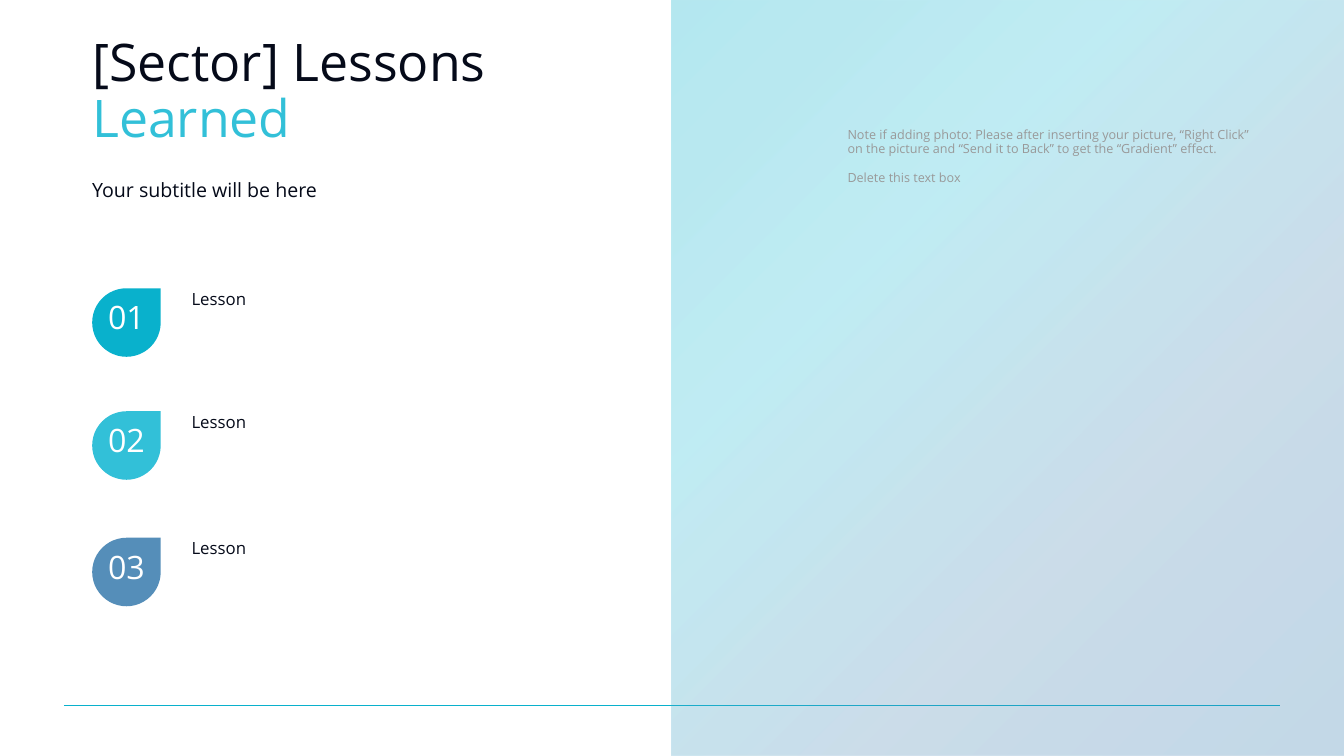
"""Build a lessons-learned slide with three numbered lessons beside a gradient panel."""
import pptx
import pptx.util
import pptx.dml.color
import pptx.enum.shapes
import pptx.enum.text
import pptx.oxml.ns
from lxml import etree

TITLE = [("[Sector] Lessons ", "ink"), ("Learned", "sky")]
SUBTITLE = "Your subtitle will be here"
LESSONS = [
    ("01", "Lesson", "teal", 38.13),
    ("02", "Lesson", "sky", 54.4),
    ("03", "Lesson", "steel", 71.13),
]
NOTE = [
    "Note if adding photo: Please after inserting your picture, “Right Click” on the picture "
    "and “Send it to Back” to get the “Gradient” effect.",
    "Delete this text box",
]

THEME = {
    "font": "Open Sans",
    "colors": {"ink": "050A19", "teal": "09B1CC", "sky": "32C0D8", "steel": "558EB9",
               "blue": "397FB0", "white": "FFFFFF", "grey": "999999"},
    "sizes": {"title": 74, "number": 46, "subtitle": 28, "lesson": 24, "note": 18},
    "panel": [(0, "teal"), (33, "sky"), (66, "steel"), (100, "blue")],
    "panel_alpha": 30,
}

W, H = 26.67, 15
LEFT, TEXT_LEFT, DROP = 6.86, 14.25, 1.36
SHAPES = pptx.enum.shapes.MSO_SHAPE
ALIGN = pptx.enum.text.PP_ALIGN


def rgb(name):
    return pptx.dml.color.RGBColor.from_string(THEME["colors"][name])


def place(x, y, w, h):
    """Turn percentages of the slide into lengths."""
    return [pptx.util.Inches(v * side / 100) for v, side in ((x, W), (y, H), (w, W), (h, H))]


def assign(obj, values):
    for name, value in values.items():
        setattr(obj, name, value)


def add_text(s, box, paragraphs, size, spacing=0.9, margins=(0, 0), align=ALIGN.LEFT, gap=0):
    tf = s.shapes.add_textbox(*place(*box)).text_frame
    mx, my = (pptx.util.Inches(m) for m in margins)
    assign(tf, {"word_wrap": True, "margin_left": mx, "margin_right": mx,
                "margin_top": my, "margin_bottom": my})
    for i, runs in enumerate(paragraphs):
        p = tf.add_paragraph() if i else tf.paragraphs[0]
        assign(p, {"line_spacing": spacing, "alignment": align,
                   "space_before": pptx.util.Pt(gap if i else 0)})
        for text, color in runs:
            r = p.add_run()
            r.text = text
            assign(r.font, {"name": THEME["font"], "size": pptx.util.Pt(THEME["sizes"][size])})
            r.font.color.rgb = rgb(color)


def add_shape(s, kind, box):
    sp = s.shapes.add_shape(kind, *place(*box))
    sp.shadow.inherit = False
    sp.line.fill.background()
    return sp


def add_rule(s):
    x, y, w, h = place(4.76, 93.33, 90.48, 0)
    line = s.shapes.add_connector(pptx.enum.shapes.MSO_CONNECTOR.STRAIGHT, x, y, x + w, y)
    line.line.color.rgb = rgb("teal")
    line.line.width = pptx.util.Pt(0.75)
    etree.SubElement(line._element.spPr, pptx.oxml.ns.qn("a:effectLst"))


def add_panel(s):
    qn = pptx.oxml.ns.qn
    sp = add_shape(s, SHAPES.RECTANGLE, (50, 0, 50, 100))
    sp.fill.gradient()
    sp.fill.gradient_angle = 315
    stops = sp._element.spPr.find(".//" + qn("a:gsLst"))
    for stop in list(stops):
        stops.remove(stop)
    for pos, name in THEME["panel"]:
        stop = etree.SubElement(stops, qn("a:gs"), pos=str(pos * 1000))
        color = etree.SubElement(stop, qn("a:srgbClr"), val=THEME["colors"][name])
        etree.SubElement(color, qn("a:alpha"), val=str(THEME["panel_alpha"] * 1000))


def add_lesson(s, number, text, color, top):
    add_text(s, (TEXT_LEFT, top - 0.5, 23.55, 9.07), [[(text, "ink")]], "lesson", spacing=1.2)
    drop = add_shape(s, SHAPES.TEAR, (LEFT, top, DROP / W * 100, DROP / H * 100))
    drop.fill.solid()
    drop.fill.fore_color.rgb = rgb(color)
    add_text(s, (7.35, top + 1.82, 4.12, 5.13), [[(number, "white")]], "number",
             align=ALIGN.CENTER)


def main():
    prs = pptx.Presentation()
    prs.slide_width, prs.slide_height = pptx.util.Inches(W), pptx.util.Inches(H)
    s = prs.slides.add_slide(prs.slide_layouts[6])
    add_rule(s)
    add_panel(s)
    add_text(s, (LEFT, 4.87, 37.12, 16.8), [TITLE], "title")
    add_text(s, (LEFT, 23.93, 37.12, 3.27), [[(SUBTITLE, "ink")]], "subtitle")
    for lesson in LESSONS:
        add_lesson(s, *lesson)
    add_text(s, (62.69, 16.73, 31.5, 10.8), [[(t, "grey")] for t in NOTE], "note",
             margins=(0.1, 0.05), gap=22)
    prs.save("out.pptx")


if __name__ == "__main__":
    main()
